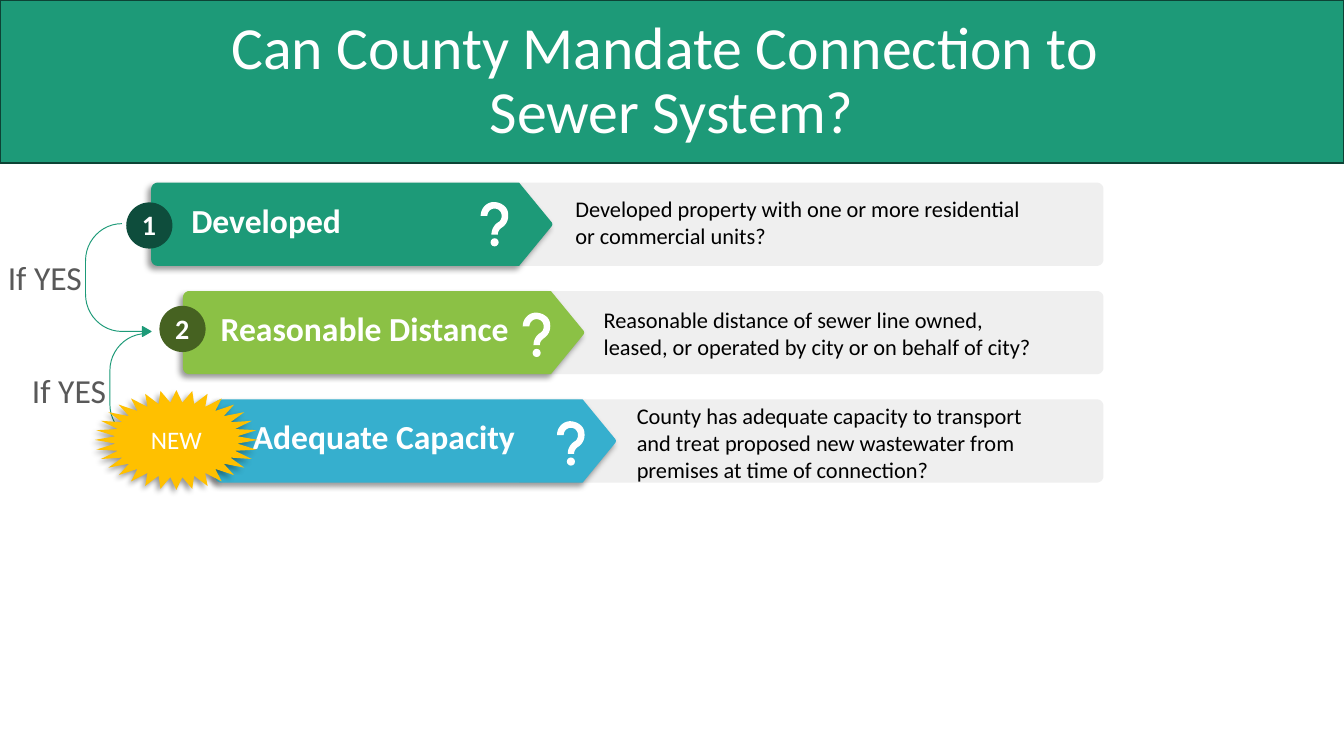
from lxml import etree
from pptx import Presentation
from pptx.dml.color import RGBColor
from pptx.enum.shapes import MSO_SHAPE as Preset
from pptx.enum.text import MSO_ANCHOR as Anchor, PP_ALIGN as Align, MSO_AUTO_SIZE as AutoSize
from pptx.oxml.ns import qn
from pptx.util import Pt

GREEN = RGBColor(0x1D, 0x9A, 0x78)
DARK_GREEN = RGBColor(0x0D, 0x43, 0x35)
LIME = RGBColor(0x8B, 0xC1, 0x45)
BLUE = RGBColor(0x36, 0xAF, 0xCE)
BADGE_GREEN = RGBColor(0x0E, 0x4D, 0x3C)
BADGE_LIME = RGBColor(0x46, 0x62, 0x21)
AMBER = RGBColor(0xFF, 0xC0, 0x00)
PALE_GREY = RGBColor(0xEF, 0xEF, 0xEF)
GREY = RGBColor(0x59, 0x59, 0x59)
WHITE = RGBColor(0xFF, 0xFF, 0xFF)
BLACK = RGBColor(0, 0, 0)

presentation = Presentation()
presentation.slide_width, presentation.slide_height = Pt(960), Pt(540)
slide = presentation.slides.add_slide(presentation.slide_layouts[6])


def draw(geometry, fill=None, line=None, width=1, preset=None, origin=(0, 0),
         closed=True, shadow=False):
    """Draw a preset in a box, or an outline of points and six-number Bezier steps."""
    if preset is not None:
        shape = slide.shapes.add_shape(preset, *map(Pt, geometry))
    else:
        points = [geometry[0]]
        for step in geometry[1:]:
            if len(step) == 2:
                points.append(step)
                continue
            knots = [points[-1], step[:2], step[2:4], step[4:]]
            for t in [i / 12 for i in range(1, 13)]:
                weights = ((1 - t) ** 3, 3 * t * (1 - t) ** 2, 3 * t * t * (1 - t), t ** 3)
                points.append(tuple(sum(w * k[axis] for w, k in zip(weights, knots))
                                    for axis in (0, 1)))
        points = [(Pt(origin[0] + x), Pt(origin[1] + y)) for x, y in points]
        builder = slide.shapes.build_freeform(*points[0])
        builder.add_line_segments(points[1:], close=closed)
        shape = builder.convert_to_shape()
    shape.shadow.inherit = False
    if fill is None:
        shape.fill.background()
    else:
        shape.fill.solid()
        shape.fill.fore_color.rgb = fill
    if line is None:
        shape.line.fill.background()
    else:
        shape.line.color.rgb = line
        shape.line.width = Pt(width)
    if shadow:
        effects = shape._element.spPr.find(qn("a:effectLst"))
        outer = etree.SubElement(effects, qn("a:outerShdw"), blurRad=str(Pt(4)),
                                 dist=str(Pt(3)), dir="8100000", algn="tr", rotWithShape="0")
        color = etree.SubElement(outer, qn("a:srgbClr"), val="000000")
        etree.SubElement(color, qn("a:alpha"), val="40000")
    return shape


def write(shape, text, size, color, bold=False, align=Align.LEFT, anchor=Anchor.TOP,
          wrap=True, spacing=None):
    frame = shape.text_frame
    frame.word_wrap = wrap
    frame.auto_size = AutoSize.NONE
    frame.vertical_anchor = anchor
    frame.text = text
    paragraph = frame.paragraphs[0]
    paragraph.alignment = align
    paragraph.line_spacing = spacing
    for run in paragraph.runs:
        for name, value in {"name": "Calibri", "size": Pt(size), "bold": bold}.items():
            setattr(run.font, name, value)
        run.font.color.rgb = color


# Title band
draw((0, 0, 960, 116.6), GREEN, DARK_GREEN, preset=Preset.RECTANGLE)
title = slide.shapes.add_textbox(Pt(12.2), Pt(6.5), Pt(935.3), Pt(104.4))
write(title, "Can County Mandate Connection to \vSewer System?", 42.7, WHITE,
      align=Align.CENTER, anchor=Anchor.MIDDLE, spacing=0.9)

# Rows: grey panel with a coloured pointer, each stepping right
HEIGHT, CORNER, CURVE = 59.4, 4.7, 2.1
PANEL_LEFT, PANEL_WIDTH = 370.8, 417.4
panel = [(0, 0), (PANEL_WIDTH - CORNER, 0),
         (PANEL_WIDTH - CURVE, 0, PANEL_WIDTH, CURVE, PANEL_WIDTH, CORNER),
         (PANEL_WIDTH, HEIGHT - CORNER),
         (PANEL_WIDTH, HEIGHT - CURVE, PANEL_WIDTH - CURVE, HEIGHT,
          PANEL_WIDTH - CORNER, HEIGHT),
         (0, HEIGHT)]
pointer = [(CORNER, 0), (262.8, 0), (285.9, 28.1), (286.7, 29.1, 286.7, 30.3, 285.9, 31.3),
           (262.8, HEIGHT), (CORNER, HEIGHT),
           (CURVE, HEIGHT, 0, HEIGHT - CURVE, 0, HEIGHT - CORNER),
           (0, CORNER), (0, CURVE, CURVE, 0, CORNER, 0)]
for row, color in enumerate((GREEN, LIME, BLUE)):
    top = 130.5 + 77.4 * row
    draw(panel, PALE_GREY, origin=(PANEL_LEFT, top))
    draw(pointer, color, origin=(108 + 22.7 * row, top), shadow=True)

# Number badges
for number, left, top, color in (("1", 90.2, 144.6, BADGE_GREEN),
                                 ("2", 113.9, 218.5, BADGE_LIME)):
    draw((left, top, 33, 33), color, preset=Preset.OVAL)
    box = slide.shapes.add_textbox(Pt(left + 4), Pt(top + 0.2), Pt(24.5), Pt(31.7))
    write(box, number, 20, WHITE, bold=True, align=Align.CENTER, wrap=False)

# Descriptions
for text, left, top, width, height in (
        ("Developed property with one or more residential or commercial units?",
         403.9, 136.1, 347, 46),
        ("Reasonable distance of sewer line owned, leased, or operated by city "
         "or on behalf of city?", 424.1, 215.3, 325.4, 65.5),
        ("County has adequate capacity to transport and treat proposed new wastewater "
         "from premises at time of connection?", 447.8, 283.7, 302.4, 65.5)):
    box = slide.shapes.add_textbox(Pt(left), Pt(top), Pt(width), Pt(height))
    write(box, text, 16, BLACK)

# Curved arrows from one step to the next
bracket = [(26, 0), (11.6, 0, 0, 12, 0, 26.6), (0, 50.4), (0, 65, 11.6, 77, 26, 77), (41.8, 77)]
arrowhead = [(40.6, 73.4), (46.8, 77), (40.6, 80.6)]
for origin in ((61.1, 159.8), (78.5, 238.3)):
    draw(bracket, line=GREEN, width=0.69, origin=origin, closed=False)
    draw(arrowhead, GREEN, GREEN, 0.69, origin=origin)

# Question marks
hook = [(19.6, 8.6), (19.6, 3.6, 14.4, 0, 8.8, 0.1), (3.6, 0.6, 0, 5, 0, 10), (4.8, 10),
        (4.8, 7.2, 7, 4.8, 9.9, 4.8), (12.8, 4.8, 15, 7.1, 15, 10),
        (15, 11.7, 14.3, 13.4, 13, 14.3), (9.6, 16.2, 7.7, 19.6, 7.7, 23.4), (12.2, 23.4),
        (12.2, 21.3, 13.4, 19.5, 15.1, 18.4), (18.4, 16.3, 20.1, 12.5, 19.6, 8.6)]
for left, top in ((343.4, 144.2), (373.4, 223.2), (397.9, 300.8)):
    draw(hook, WHITE, origin=(left, top))
    draw((left + 7, top + 26, 5.8, 5.8), WHITE, preset=Preset.OVAL)

# Row headings
for text, left, top, width in (("Developed", 129.6, 139, 122.4),
                               ("Reasonable Distance", 150.5, 216.4, 222.5),
                               ("Adequate Capacity", 173.5, 293.8, 203.8)):
    box = slide.shapes.add_textbox(Pt(left), Pt(top), Pt(width), Pt(36))
    write(box, text, 24, WHITE, bold=True, wrap=False)

# Arrow labels
for left, top, width in ((-4.3, 175, 72.7), (8.6, 255.6, 81.4)):
    box = slide.shapes.add_textbox(Pt(left), Pt(top), Pt(width), Pt(46))
    write(box, "If YES", 24, GREY, align=Align.CENTER, anchor=Anchor.MIDDLE)

# Starburst
star = draw((67.7, 278.6, 116.6, 71.3), AMBER, preset=Preset.STAR_32_POINT, shadow=True)
write(star, "NEW", 18, WHITE, align=Align.CENTER, anchor=Anchor.MIDDLE)

presentation.save("out.pptx")
